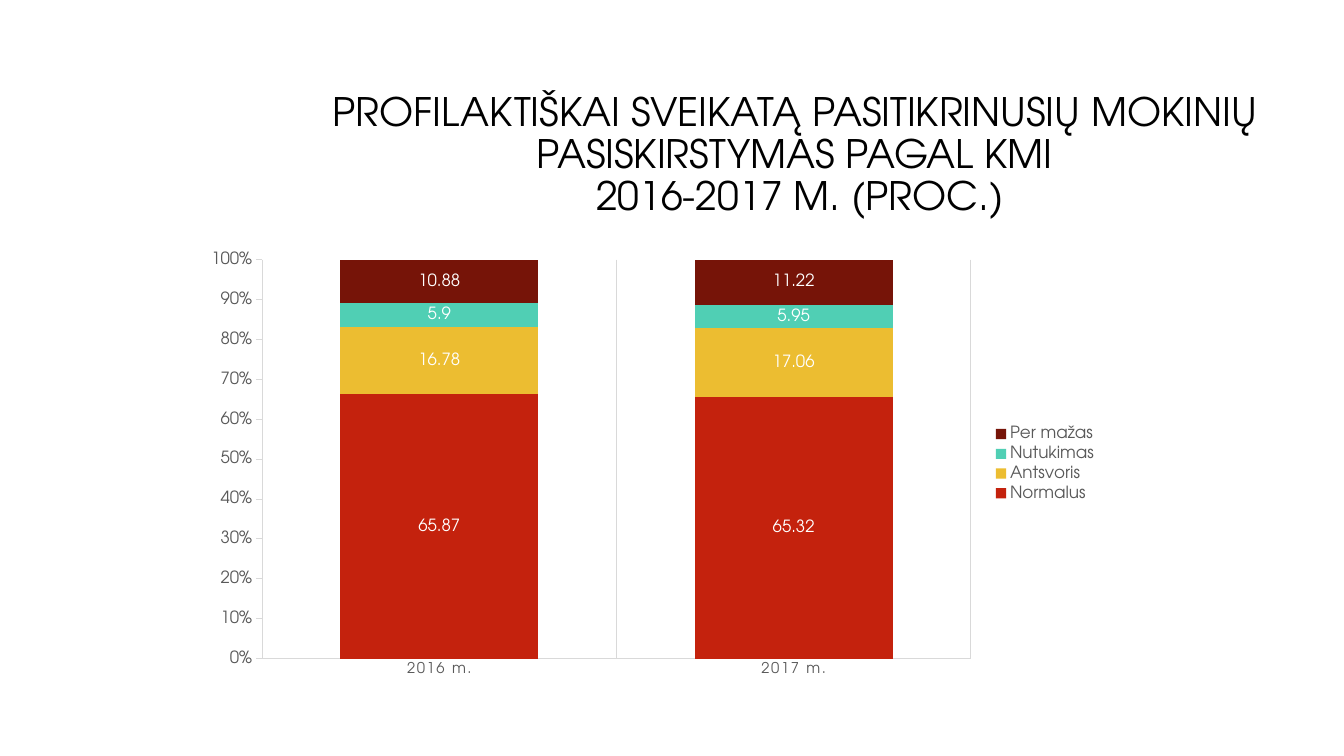
"""Build a slide with a 100 % stacked column chart of pupils by body mass index."""
import pptx
import pptx.chart.data
import pptx.dml.color
import pptx.enum.chart
import pptx.enum.text
import pptx.oxml
import pptx.oxml.ns
import pptx.util

TITLE = "PROFILAKTIŠKAI SVEIKATĄ PASITIKRINUSIŲ MOKINIŲ PASISKIRSTYMAS PAGAL KMI\v 2016-2017 M. (PROC.)"
YEARS = ["2016 m.", "2017 m."]
SERIES = [
    ("Normalus", (65.87, 65.32), "C4220D"),
    ("Antsvoris", (16.78, 17.06), "ECBD31"),
    ("Nutukimas", (5.9, 5.95), "50CFB4"),
    ("Per mažas", (10.88, 11.22), "761408"),
]
THEME = {
    "font": "TeX Gyre Adventor",
    "title": (28, "000000"),
    "base": (10, "000000"),
    "category": (10.6, "595959"),
    "value": (12, "595959"),
    "legend": (12, "595959"),
    "label": (12, "FFFFFF"),
    "line": ("D9D9D9", 0.75),
    "category_spacing": 120,
}
SLIDE_SIZE = (13.33, 7.5)
TITLE_BOX = (3.17, 0.84, 9.42, 1.41)
CHART_BOX = (1.92, 2.4, 9.07, 4.4)
PLOT_SHARES = {"x": 0.075, "y": 0.04, "w": 0.775, "h": 0.9}


def set_attributes(target, values):
    for name, value in values.items():
        setattr(target, name, value)


def color(value):
    return pptx.dml.color.RGBColor.from_string(value)


def style_font(font, role):
    size, value = THEME[role]
    set_attributes(font, {"name": THEME["font"], "size": pptx.util.Pt(size), "bold": False})
    font.color.rgb = color(value)


def style_line(line):
    value, width = THEME["line"]
    line.color.rgb = color(value)
    line.width = pptx.util.Pt(width)


def inches(box):
    return [pptx.util.Inches(length) for length in box]


def add_title(slide):
    frame = slide.shapes.add_textbox(*inches(TITLE_BOX)).text_frame
    set_attributes(frame, {"word_wrap": True, "vertical_anchor": pptx.enum.text.MSO_ANCHOR.MIDDLE})
    paragraph = frame.paragraphs[0]
    paragraph.text = TITLE
    set_attributes(paragraph, {"alignment": pptx.enum.text.PP_ALIGN.CENTER, "line_spacing": 0.9})
    for run in paragraph.runs:
        style_font(run.font, "title")


def place_plot(chart):
    plot_area = chart._chartSpace.chart.plotArea
    for layout in plot_area.findall(pptx.oxml.ns.qn("c:layout")):
        plot_area.remove(layout)
    modes = "".join(f'<c:{axis}Mode val="edge"/>' for axis in "xy")
    shares = "".join(f'<c:{key} val="{share}"/>' for key, share in PLOT_SHARES.items())
    plot_area.insert(0, pptx.oxml.parse_xml(
        f'<c:layout {pptx.oxml.ns.nsdecls("c")}><c:manualLayout>'
        f'<c:layoutTarget val="inner"/>{modes}{shares}</c:manualLayout></c:layout>'))


def style_axes(chart):
    tick_mark = pptx.enum.chart.XL_TICK_MARK
    axes = [
        (chart.category_axis, "category", tick_mark.NONE, True),
        (chart.value_axis, "value", tick_mark.OUTSIDE, False),
    ]
    for axis, role, mark, gridlines in axes:
        set_attributes(axis, {"major_tick_mark": mark, "minor_tick_mark": tick_mark.NONE,
                              "has_major_gridlines": gridlines})
        style_font(axis.tick_labels.font, role)
        style_line(axis.format.line)
    style_line(chart.category_axis.major_gridlines.format.line)
    set_attributes(chart.value_axis, {"minimum_scale": 0, "maximum_scale": 1, "major_unit": 0.1})
    set_attributes(chart.value_axis.tick_labels,
                   {"number_format": "0%", "number_format_is_linked": False})
    properties = chart.category_axis._element.find(".//" + pptx.oxml.ns.qn("a:defRPr"))
    properties.set("spc", str(THEME["category_spacing"]))


def add_bmi_chart(slide):
    data = pptx.chart.data.CategoryChartData()
    data.categories = YEARS
    for name, values, _ in SERIES:
        data.add_series(name, values)
    chart = slide.shapes.add_chart(
        pptx.enum.chart.XL_CHART_TYPE.COLUMN_STACKED_100, *inches(CHART_BOX), data).chart
    style_font(chart.font, "base")
    set_attributes(chart, {"has_title": False, "has_legend": True})
    set_attributes(chart.legend, {"position": pptx.enum.chart.XL_LEGEND_POSITION.RIGHT,
                                  "include_in_layout": False})
    style_font(chart.legend.font, "legend")
    plot = chart.plots[0]
    set_attributes(plot, {"gap_width": 79, "overlap": 100, "vary_by_categories": False})
    for series, (_, _, fill) in zip(plot.series, SERIES):
        series.format.fill.solid()
        series.format.fill.fore_color.rgb = color(fill)
        set_attributes(series.data_labels, {
            "show_value": True, "position": pptx.enum.chart.XL_LABEL_POSITION.CENTER})
        style_font(series.data_labels.font, "label")
    style_axes(chart)
    place_plot(chart)


def main():
    presentation = pptx.Presentation()
    presentation.slide_width, presentation.slide_height = inches(SLIDE_SIZE)
    slide = presentation.slides.add_slide(presentation.slide_layouts[6])
    add_title(slide)
    add_bmi_chart(slide)
    presentation.save("out.pptx")


if __name__ == "__main__":
    main()
